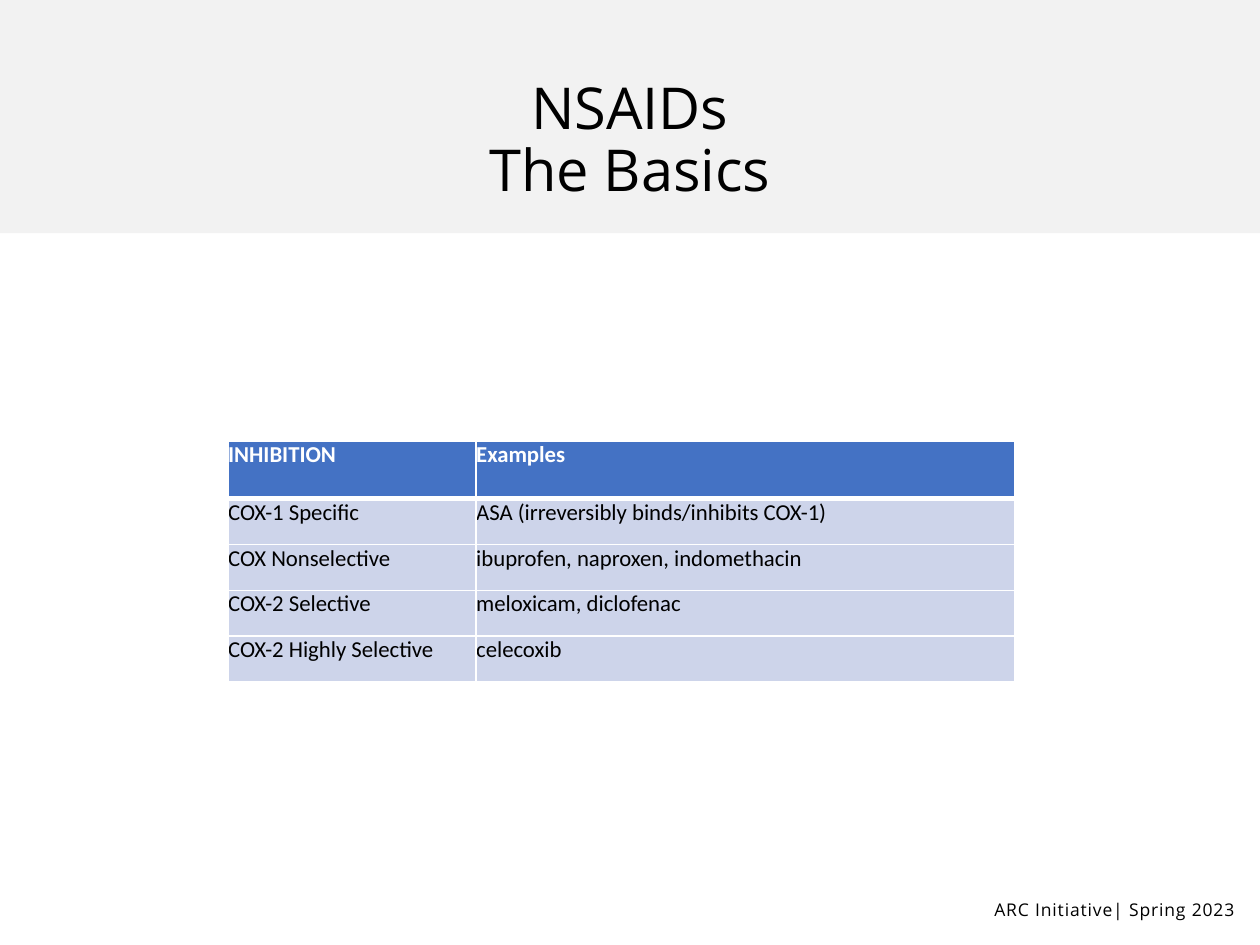
from lxml.etree import SubElement
from pptx import Presentation
from pptx.dml.color import RGBColor
from pptx.enum.shapes import MSO_SHAPE as Shape
from pptx.enum.text import MSO_ANCHOR as Anchor, PP_ALIGN as Align
from pptx.oxml.ns import qn
from pptx.util import Cm, Pt

BLACK, WHITE, BLUE, PALE = "000000", "FFFFFF", "4472C4", "CDD4EA"
ROWS = [
    ("INHIBITION", "Examples"),
    ("COX-1 Specific", "ASA (irreversibly binds/inhibits COX-1)"),
    ("COX Nonselective", "ibuprofen, naproxen, indomethacin"),
    ("COX-2 Selective", "meloxicam, diclofenac"),
    ("COX-2 Highly Selective", "celecoxib"),
]


def paint(color, tone):
    color.rgb = RGBColor.from_string(tone)


def style(frame, face, size, tone, bold=False, align=Align.LEFT, gap=None):
    for para in frame.paragraphs:
        para.alignment = align
        para.line_spacing = gap
        for run in para.runs:
            run.font.name = face
            run.font.size = Pt(size)
            run.font.bold = bold
            paint(run.font.color, tone)


def inset(item, size):
    item.margin_left = item.margin_right = Cm(size)
    item.margin_top = item.margin_bottom = Cm(size)


def add_text(slide, text, left, top, width, height, pad):
    box = slide.shapes.add_textbox(Cm(left), Cm(top), Cm(width), Cm(height))
    frame = box.text_frame
    frame.word_wrap = True
    inset(frame, pad)
    frame.text = text
    return frame


def add_header(slide, left, top, width, height):
    band = slide.shapes.add_shape(
        Shape.RECTANGLE, Cm(left), Cm(top), Cm(width), Cm(height))
    band.shadow.inherit = False
    band.line.fill.background()
    band.fill.solid()
    paint(band.fill.fore_color, BLACK)
    tone = band._element.spPr.find(".//" + qn("a:srgbClr"))
    SubElement(tone, qn("a:alpha"), val="5000")

    frame = add_text(slide, "NSAIDs\nThe Basics",
                     left + 1.75, top + 1.02, width - 3.5, 3.68, 0.13)
    frame.vertical_anchor = Anchor.MIDDLE
    style(frame, "Open Sans", 33, BLACK, align=Align.CENTER, gap=0.9)


def add_edges(cell, base):
    props = cell._tc.get_or_add_tcPr()
    sides = [("a:lnL", 1), ("a:lnR", 1), ("a:lnT", 1), ("a:lnB", base)]
    for spot, (tag, width) in enumerate(sides):
        line = props.makeelement(qn(tag), {"w": str(Pt(width))})
        fill = SubElement(line, qn("a:solidFill"))
        SubElement(fill, qn("a:srgbClr"), val=WHITE)
        props.insert(spot, line)


def add_drugs(slide, left, top, width, height):
    table = slide.shapes.add_table(
        len(ROWS), 2, Cm(left), Cm(top), Cm(width), Cm(height)).table
    first, head = 5, 1.16
    table.columns[0].width = Cm(first)
    table.columns[1].width = Cm(width - first)
    for i, texts in enumerate(ROWS):
        top_row = i == 0
        share = (height - head) / (len(ROWS) - 1)
        table.rows[i].height = Cm(head if top_row else share)
        for j, text in enumerate(texts):
            cell = table.cell(i, j)
            inset(cell, 0)
            cell.text_frame.text = text
            style(cell.text_frame, "Calibri", 13,
                  WHITE if top_row else BLACK, top_row)
            cell.fill.solid()
            paint(cell.fill.fore_color, BLUE if top_row else PALE)
            add_edges(cell, 3 if top_row else 1)


def add_footer(slide, left, top, width, height):
    frame = add_text(slide, "ARC Initiative| Spring 2023",
                     left, top, width, height, 0)
    style(frame, "Open Sans", 10, BLACK, align=Align.RIGHT, gap=Pt(12))
    for run in frame.paragraphs[0].runs:
        run._r.get_or_add_rPr().set("spc", "50")


def main():
    deck = Presentation()
    deck.slide_width, deck.slide_height = Cm(25.4), Cm(19.05)
    slide = deck.slides.add_slide(deck.slide_layouts[6])
    add_header(slide, 0, 0, 25.4, 4.7)
    add_drugs(slide, 4.6, 8.89, 15.86, 4.86)
    add_footer(slide, 18.57, 18.13, 6.32, 0.43)
    deck.save("out.pptx")


if __name__ == "__main__":
    main()
